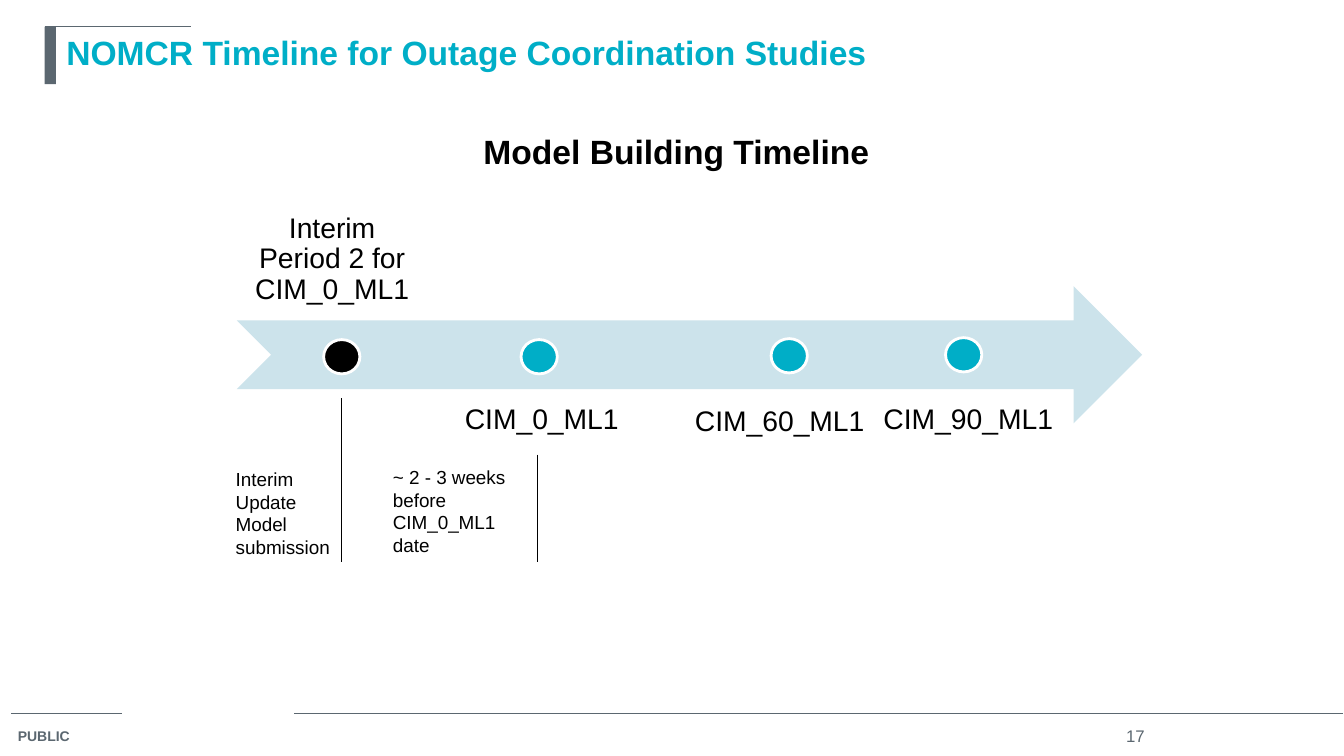
from lxml.etree import SubElement
from pptx import Presentation
from pptx.dml.color import RGBColor
from pptx.enum.shapes import MSO_CONNECTOR, MSO_SHAPE
from pptx.enum.text import MSO_ANCHOR, PP_ALIGN
from pptx.oxml.ns import qn
from pptx.util import Pt

COLORS = {
    "slate": "5B6770",
    "teal": "00AEC7",
    "pale": "CCE3EB",
    "black": "000000",
    "white": "FFFFFF",
}


def color(name):
    """Return the named colour."""
    return RGBColor.from_string(COLORS[name])


def add_rule(page, start, end, ink):
    """Draw a thin straight line between two points."""
    rule = page.shapes.add_connector(MSO_CONNECTOR.STRAIGHT, *map(Pt, start + end))
    rule.line.color.rgb = color(ink)
    rule.line.width = Pt(0.75)
    SubElement(rule._element.spPr, qn("a:effectLst"))


def add_shape(page, kind, box, fill, outline=None):
    """Add a filled shape with an optional outline."""
    shape = page.shapes.add_shape(kind, *map(Pt, box))
    shape.shadow.inherit = False
    shape.fill.solid()
    shape.fill.fore_color.rgb = color(fill)
    if outline:
        shape.line.color.rgb = color(outline)
        shape.line.width = Pt(2)
    else:
        shape.line.fill.background()


def add_text(page, box, text, size, ink="black", bold=False, align=PP_ALIGN.LEFT,
             anchor=MSO_ANCHOR.TOP, insets=(7.2, 3.6), spacing=1.0):
    """Add a wrapped text box holding one paragraph."""
    frame = page.shapes.add_textbox(*map(Pt, box)).text_frame
    frame.word_wrap = True
    frame.vertical_anchor = anchor
    frame.margin_left = frame.margin_right = Pt(insets[0])
    frame.margin_top = frame.margin_bottom = Pt(insets[1])
    para = frame.paragraphs[0]
    para.text = text
    para.alignment = align
    para.line_spacing = spacing
    para.font.name = "Arial"
    para.font.size = Pt(size)
    para.font.bold = bold
    para.font.color.rgb = color(ink)


def add_header(page, left, top, width, height):
    """Draw the title with its corner bar and rule."""
    add_shape(page, MSO_SHAPE.RECTANGLE, (left, top, 8, height), "slate")
    add_rule(page, (left, top), (left + 104.4, top), "slate")
    add_text(page, (left + 8.4, top, width - 8.4, height),
             "NOMCR Timeline for Outage Coordination Studies", 24, "teal", bold=True)


def add_timeline(page, left, top, width, height):
    """Draw the arrow with its milestone dots and labels."""
    add_shape(page, MSO_SHAPE.NOTCHED_RIGHT_ARROW,
              (left, top + 72.7, width, 97.9), "pale")
    above, below = MSO_ANCHOR.BOTTOM, MSO_ANCHOR.TOP
    milestones = [
        ("Interim Period 2 for CIM_0_ML1", "black", (62, 110.8), (0.7, 0, 134.6, 97.9), above),
        ("CIM_0_ML1", "teal", (203, 110.8), (150.5, 146.8, 134.6, 97.9), below),
        ("CIM_60_ML1", "teal", (381.6, 110.1), (314.6, 115.2, 146.2, 76.3), above),
        ("CIM_90_ML1", "teal", (506.2, 109.4), (449.3, 146.8, 146.2, 97.9), below),
    ]
    for label, fill, (dot_x, dot_y), (x, y, label_width, label_height), anchor in milestones:
        add_text(page, (left + x, top + y, label_width, label_height), label, 20.2,
                 align=PP_ALIGN.CENTER, anchor=anchor, insets=(10, 11.5), spacing=0.9)
        add_shape(page, MSO_SHAPE.OVAL, (left + dot_x, top + dot_y, 25.9, 24.5), fill, "white")


def add_notes_below(page, left, top, width, height):
    """Draw the two remarks, each left of its vertical marker."""
    bottom = top + height
    remarks = [
        ("Interim Update Model submission", (0, 46.1, 92.9, 72.7), 82.8, 0),
        ("~ 2 - 3 weeks before CIM_0_ML1 date", (112.3, 44.6, 98.6, 72.7), width, 40.3),
    ]
    for text, (x, y, text_width, text_height), marker_x, marker_y in remarks:
        add_rule(page, (left + marker_x, top + marker_y), (left + marker_x, bottom), "black")
        add_text(page, (left + x, top + y, text_width, text_height), text, 13.5)


def add_footer(page, left, top, width, height):
    """Draw the footer rules, the marking and the page number."""
    for start, end in [(2.2, 81.4), (204.5, width)]:
        add_rule(page, (left + start, top), (left + end, top), "slate")
    add_text(page, (left, top + 6.5, 74.2, 20.2), "PUBLIC", 10, "slate", bold=True)
    add_text(page, (left + 786.3, top + 7.2, 38.2, 17.3), "17", 12, "slate",
             align=PP_ALIGN.CENTER, anchor=MSO_ANCHOR.MIDDLE)


def main():
    """Build the slide and save the deck."""
    deck = Presentation()
    deck.slide_width, deck.slide_height = Pt(960), Pt(540)
    page = deck.slides.add_slide(deck.slide_layouts[6])
    add_footer(page, 5.7, 509.8, 953.3, 30)
    add_header(page, 31.9, 19.2, 896.2, 41)
    add_text(page, (146.9, 90, 672.5, 36.7), "Model Building Timeline", 24,
             bold=True, align=PP_ALIGN.CENTER)
    add_timeline(page, 169.2, 131.8, 646.6, 244.8)
    add_notes_below(page, 161.3, 284.4, 222.5, 117.4)
    deck.save("out.pptx")


if __name__ == "__main__":
    main()
